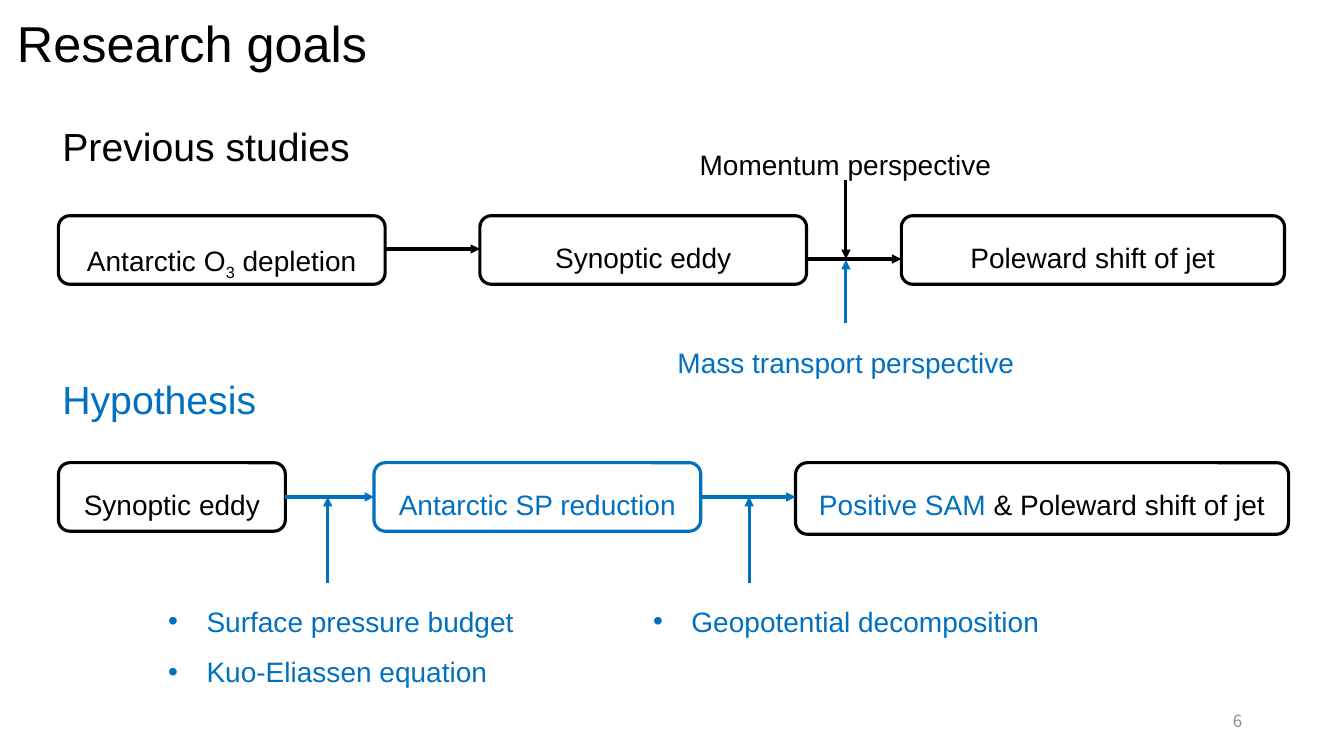
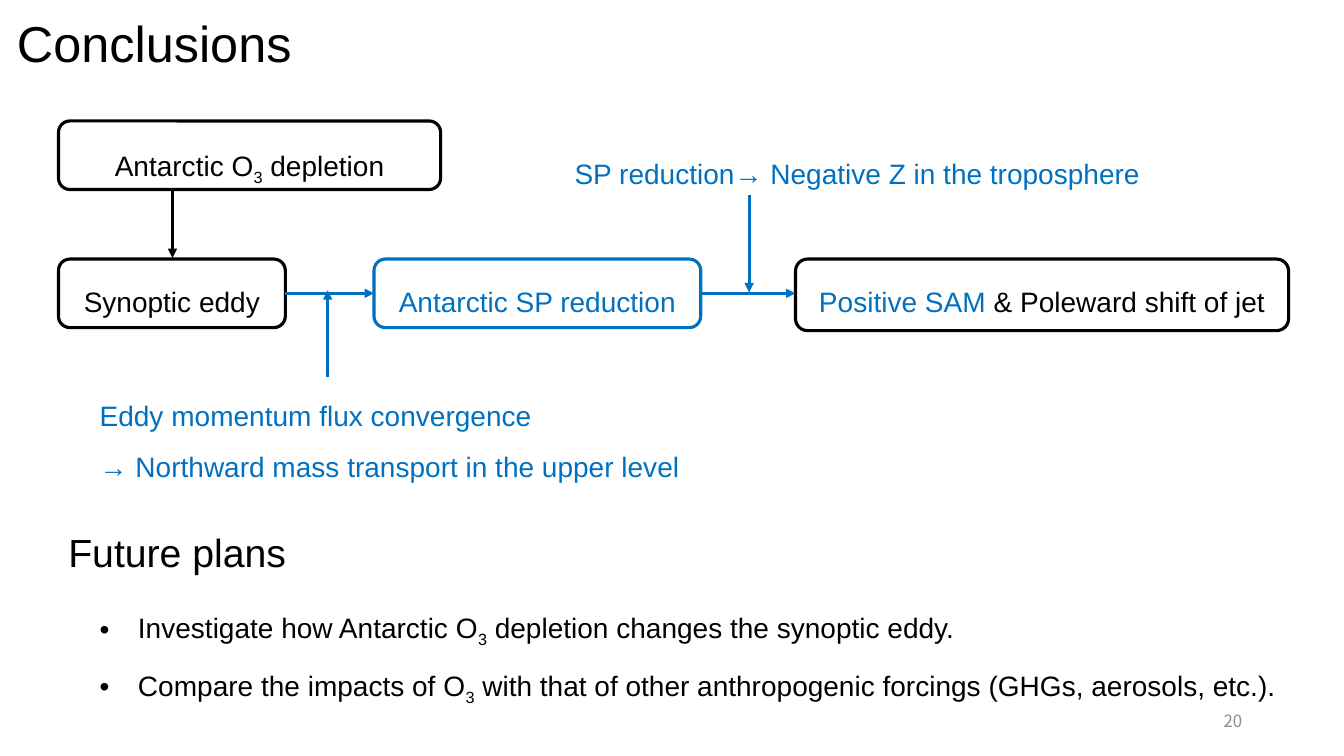
"""Build the research goals and conclusions slides."""
from dataclasses import dataclass

from lxml.etree import SubElement
from pptx import Presentation
from pptx.dml.color import RGBColor
from pptx.enum.shapes import MSO_CONNECTOR, MSO_SHAPE
from pptx.enum.text import MSO_ANCHOR, MSO_AUTO_SIZE, PP_ALIGN
from pptx.oxml.ns import qn
from pptx.util import Pt

PX = 9144


@dataclass(frozen=True)
class Theme:
    black: RGBColor = RGBColor(0x00, 0x00, 0x00)
    blue: RGBColor = RGBColor(0x00, 0x70, 0xC0)
    grey: RGBColor = RGBColor(0x8C, 0x8C, 0x8C)
    font: str = "Arial"
    number_font: str = "Noto Sans CJK KR"
    title_size: int = 36
    heading_size: int = 28
    body_size: int = 20
    number_size: int = 12
    line_width: float = 2.25
    body_spacing: float = 1.5
    bullet_indent: int = 38


theme = Theme()


def add_text(slide, place, lines, colour=theme.black, size=theme.body_size, align=PP_ALIGN.LEFT,
             outlined=False, wrap=True, bullets=False):
    """Add a text box or outlined box; bars split a line into runs, and a run of 3 is a subscript."""
    bounds = [length * PX for length in place]
    if outlined:
        shape = slide.shapes.add_shape(MSO_SHAPE.ROUNDED_RECTANGLE, *bounds)
        shape.shadow.inherit = False
        shape.fill.background()
        shape.line.color.rgb = colour
        shape.line.width = Pt(theme.line_width)
    else:
        shape = slide.shapes.add_textbox(*bounds)
    frame = shape.text_frame
    frame.word_wrap = wrap
    frame.vertical_anchor = MSO_ANCHOR.TOP
    frame.auto_size = MSO_AUTO_SIZE.NONE if outlined else MSO_AUTO_SIZE.SHAPE_TO_FIT_TEXT
    frame.text = "\n".join(lines)
    for paragraph in frame.paragraphs:
        first, *rest = paragraph.text.split("|")
        paragraph.runs[0].text = first
        for part in rest:
            paragraph.add_run().text = part
        paragraph.alignment = align
        if size == theme.body_size:
            paragraph.line_spacing = theme.body_spacing
        if bullets:
            properties = paragraph._p.get_or_add_pPr()
            properties.set("marL", str(theme.bullet_indent * PX))
            properties.set("indent", str(-theme.bullet_indent * PX))
            SubElement(properties, qn("a:buFont"), typeface=theme.font)
            SubElement(properties, qn("a:buChar"), char="•")
        for run in paragraph.runs:
            run.font.name = theme.font
            run.font.size = Pt(size)
            run.font.color.rgb = colour
            if run.text == "3":
                run.font._element.set("baseline", "-25000")
    return shape


def add_arrow(slide, start_x, start_y, end_x, end_y, colour=theme.blue):
    """Add a straight arrow that points at its end."""
    ends = [length * PX for length in (start_x, start_y, end_x, end_y)]
    arrow = slide.shapes.add_connector(MSO_CONNECTOR.STRAIGHT, *ends)
    arrow.line.color.rgb = colour
    arrow.line.width = Pt(theme.line_width)
    SubElement(arrow.line._get_or_add_ln(), qn("a:tailEnd"), type="triangle")
    SubElement(arrow._element.spPr, qn("a:effectLst"))


presentation = Presentation()
presentation.slide_width = 1333 * PX
presentation.slide_height = 750 * PX

slides = []
for title, number, chain_top in (("Research goals", "6", 459), ("Conclusions", "20", 257)):
    slide = presentation.slides.add_slide(presentation.slide_layouts[6])
    slides.append(slide)
    add_text(slide, (7, 7, 1270, 71), [title], size=theme.title_size)

    page_number = add_text(slide, (942, 695, 300, 40), [number], theme.grey, theme.number_size,
                           PP_ALIGN.RIGHT)
    page_number.text_frame.auto_size = MSO_AUTO_SIZE.NONE
    page_number.text_frame.vertical_anchor = MSO_ANCHOR.MIDDLE
    page_number.text_frame.paragraphs[0].runs[0].font.name = theme.number_font

    for left, width, height, text, colour in (
        (58, 225, 68, "Synoptic eddy", theme.black),
        (371, 324, 68, "Antarctic SP reduction", theme.blue),
        (789, 489, 71, "Positive SAM| & Poleward shift of jet", theme.black),
    ):
        box = add_text(slide, (left, chain_top, width, height), [text], colour,
                       align=PP_ALIGN.CENTER, outlined=True)
    box.text_frame.paragraphs[0].runs[0].font.color.rgb = theme.blue
    for start_x, end_x in ((283, 371), (696, 789)):
        add_arrow(slide, start_x, chain_top + 34, end_x, chain_top + 34)

goals, conclusions = slides

for slide, left, top, width, text, colour in (
    (goals, 52, 116, 419, "Previous studies", theme.black),
    (goals, 52, 367, 419, "Hypothesis", theme.blue),
    (conclusions, 58, 519, 813, "Future plans", theme.black),
):
    add_text(slide, (left, top, width, 57), [text], colour, theme.heading_size)

for slide, left, top, width, text in (
    (goals, 58, 214, 324, "Antarctic O|3| depletion"),
    (goals, 476, 214, 324, "Synoptic eddy"),
    (goals, 894, 214, 380, "Poleward shift of jet"),
    (conclusions, 58, 120, 379, "Antarctic O|3| depletion"),
):
    add_text(slide, (left, top, width, 68), [text], align=PP_ALIGN.CENTER, outlined=True)

add_text(goals, (683, 125, 311, 54), ["Momentum perspective"], align=PP_ALIGN.CENTER, wrap=False)
add_text(goals, (661, 321, 356, 54), ["Mass transport perspective"], theme.blue,
         align=PP_ALIGN.CENTER, wrap=False)
add_text(goals, (157, 578, 365, 105), ["Surface pressure budget", "Kuo-Eliassen equation"],
         theme.blue, align=PP_ALIGN.JUSTIFY, wrap=False, bullets=True)
add_text(goals, (638, 578, 406, 54), ["Geopotential decomposition"],
         theme.blue, align=PP_ALIGN.JUSTIFY, wrap=False, bullets=True)

add_text(conclusions, (560, 134, 585, 54), ["SP reduction→ Negative Z in the troposphere"],
         theme.blue, align=PP_ALIGN.JUSTIFY, wrap=False)
add_text(conclusions, (89, 374, 607, 105),
         ["Eddy momentum flux convergence", "→ Northward mass transport in the upper level"],
         theme.blue, align=PP_ALIGN.JUSTIFY)
add_text(conclusions, (89, 582, 1188, 105),
         ["Investigate how Antarctic O|3| depletion changes the synoptic eddy.",
          "Compare the impacts of O|3| with that of other anthropogenic forcings "
          "(GHGs, aerosols, etc.)."],
         align=PP_ALIGN.JUSTIFY, bullets=True)

for slide, *ends, colour in (
    (goals, 382, 247, 476, 247, theme.black),
    (goals, 800, 257, 894, 257, theme.black),
    (goals, 839, 179, 839, 257, theme.black),
    (goals, 839, 320, 839, 258, theme.blue),
    (goals, 325, 578, 325, 493, theme.blue),
    (goals, 743, 578, 743, 493, theme.blue),
    (conclusions, 171, 188, 171, 256, theme.black),
    (conclusions, 325, 374, 325, 288, theme.blue),
    (conclusions, 743, 193, 743, 290, theme.blue),
):
    add_arrow(slide, *ends, colour)

presentation.save("out.pptx")
